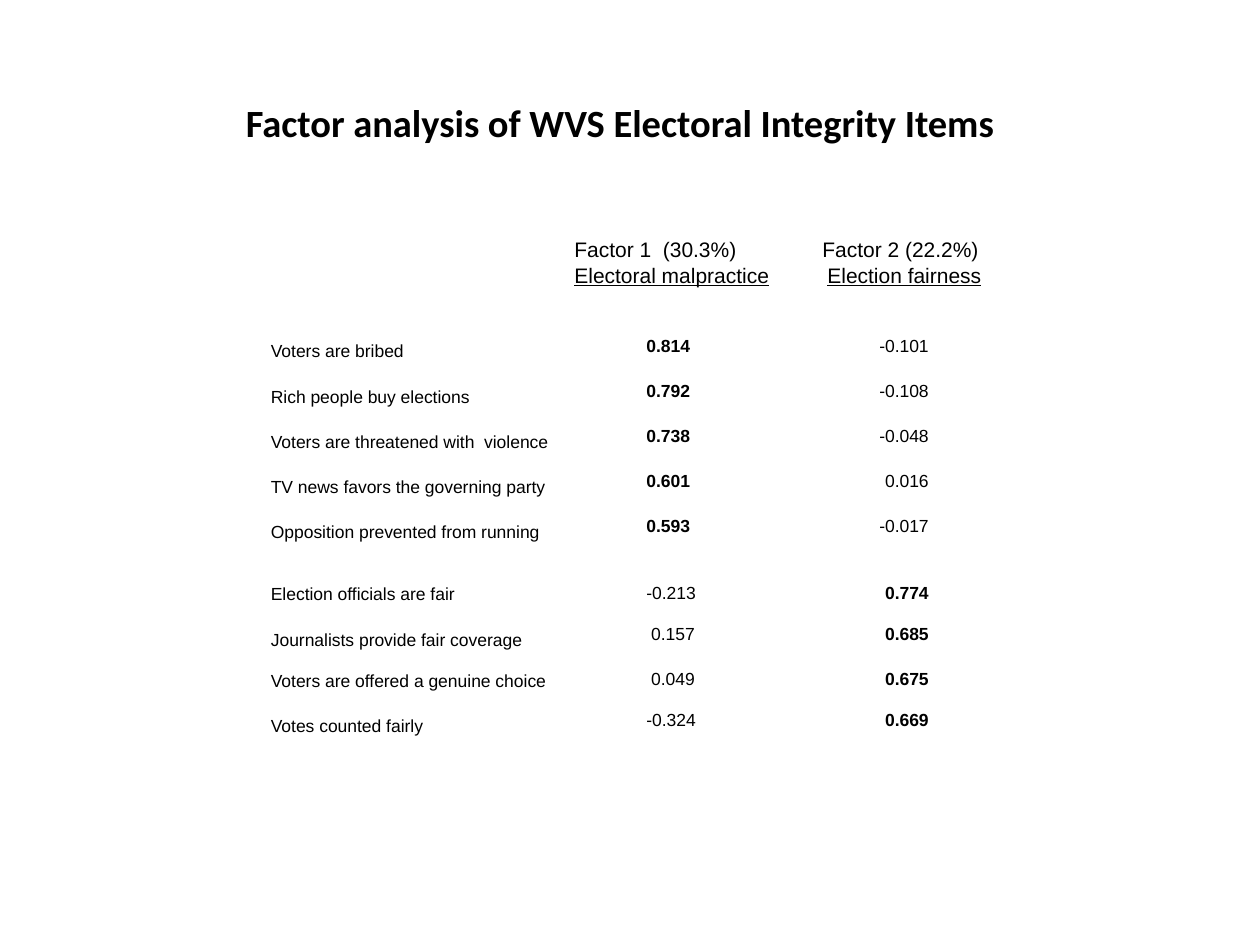
"""Build a slide with the factor loadings of the WVS electoral integrity items."""
from lxml.etree import SubElement
from pptx import Presentation
from pptx.dml.color import RGBColor
from pptx.enum.text import MSO_ANCHOR as Anchor, PP_ALIGN as Align
from pptx.oxml.ns import qn
from pptx.util import Cm, Pt

COLORS = {"text": "000000", "cell": "FFFFFF"}
HEADINGS = [
    (["Factor 1  (30.3%)", "Factor 2 (22.2%)"], [7.52, 12.52], False),
    (["Electoral malpractice", "Election fairness"], [7.52, 12.62], True),
]
LOADINGS = [
    ("Voters are bribed", "0.814", "-0.101", 0.91),
    ("Rich people buy elections", "0.792", "-0.108", 0.91),
    ("Voters are threatened with  violence", "0.738", "-0.048", 0.91),
    ("TV news favors the governing party", "0.601", "0.016", 0.91),
    ("Opposition prevented from running", "0.593", "-0.017", 0.91),
    ("", "", "", 0.43),
    ("Election officials are fair", "-0.213", "0.774", 0.83),
    ("Journalists provide fair coverage", " 0.157", "0.685", 0.91),
    ("Voters are offered a genuine choice", " 0.049", "0.675", 0.83),
    ("Votes counted fairly", "-0.324", "0.669", 0.91),
]
COLUMN_WIDTHS = [7.57, 1.73, 2.44, 1.88]
STRONG_LOADING = 0.5


def style(run, size, name="Arial", bold=False):
    run.font.size = Pt(size)
    run.font.name = name
    run.font.bold = bold
    run.font.color.rgb = RGBColor.from_string(COLORS["text"])


prs = Presentation()
prs.slide_width, prs.slide_height = Cm(25.4), Cm(19.05)
slide = prs.slides.add_slide(prs.slide_layouts[5])

title = slide.shapes.title
title.left, title.top, title.width, title.height = Cm(1.07), Cm(1.47), Cm(22.86), Cm(1.98)
title.text_frame.text = "Factor analysis of WVS Electoral Integrity Items"
title.text_frame.vertical_anchor = Anchor.MIDDLE
title_line = title.text_frame.paragraphs[0]
title_line.alignment = Align.CENTER
style(title_line.runs[0], 22, "Calibri", True)

heights = [row[-1] for row in LOADINGS]
loadings = slide.shapes.add_table(
    len(LOADINGS), len(COLUMN_WIDTHS), Cm(5.28), Cm(6.78),
    Cm(sum(COLUMN_WIDTHS)), Cm(sum(heights))).table
loadings.first_row = loadings.horz_banding = False
for column, width in zip(loadings.columns, COLUMN_WIDTHS):
    column.width = Cm(width)

for row, (item, malpractice, fairness, height) in zip(loadings.rows, LOADINGS):
    row.height = Cm(height)
    for index, (cell, text) in enumerate(zip(row.cells, (item, malpractice, "", fairness))):
        is_label = index == 0
        cell.margin_left = cell.margin_right = Cm(0.18)
        cell.margin_top = 0
        cell.margin_bottom = Cm(0.4) if is_label and item else 0
        cell.vertical_anchor = Anchor.BOTTOM if is_label else Anchor.TOP
        if is_label or not item:
            cell.fill.background()
        else:
            cell.fill.solid()
            cell.fill.fore_color.rgb = RGBColor.from_string(COLORS["cell"])
        line = cell.text_frame.paragraphs[0]
        line.alignment = Align.RIGHT if index == 3 else Align.LEFT
        if text:
            line.text = text
            style(line.runs[0], 10, bold=not is_label and float(text) > STRONG_LOADING)
        else:
            SubElement(line._p, qn("a:endParaRPr"), sz="1000")

headings = slide.shapes.add_textbox(Cm(3.81), Cm(4.65), Cm(18.62), Cm(2.06)).text_frame
headings.word_wrap = True
headings.vertical_anchor = Anchor.TOP
for number, (labels, stops, underlined) in enumerate(HEADINGS):
    line = headings.add_paragraph() if number else headings.paragraphs[0]
    tabs = SubElement(line._p.get_or_add_pPr(), qn("a:tabLst"))
    for label, stop in zip(labels, stops):
        SubElement(tabs, qn("a:tab"), pos=str(Cm(stop)), algn="l")
        for text, underline in (("\t", False), (label, underlined)):
            run = line.add_run()
            run.text = text
            style(run, 12)
            run.font.underline = underline

prs.save("out.pptx")
